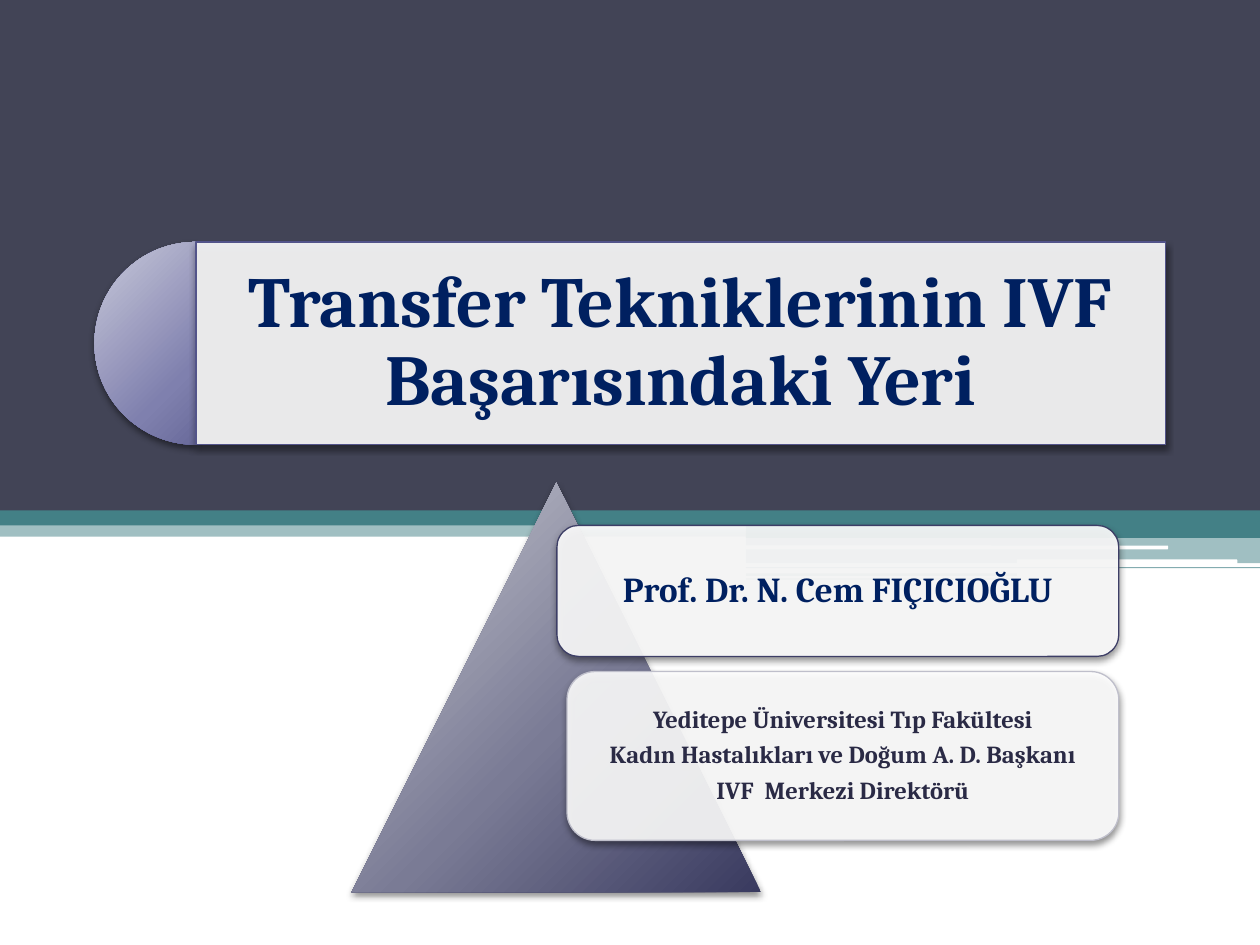
from pptx import Presentation
from pptx.dml.color import RGBColor
from pptx.enum.shapes import MSO_SHAPE
from pptx.enum.text import MSO_ANCHOR, MSO_AUTO_SIZE, PP_ALIGN
from pptx.oxml import parse_xml
from pptx.oxml.ns import nsdecls, qn
from pptx.util import Inches, Pt

# The grid has 10 columns and 7.5 rows of one inch each.
COLUMNS, ROWS = 10, 7.5
CELL = Inches(1)

FONT = "Cambria"
WHITE = RGBColor(0xFF, 0xFF, 0xFF)
SLATE = RGBColor(0x42, 0x44, 0x56)
TEAL = RGBColor(0x43, 0x80, 0x86)
NAVY = RGBColor(0x00, 0x20, 0x60)
INK = RGBColor(0x2A, 0x2A, 0x45)
BANNER_LINE = RGBColor(0x53, 0x54, 0x8A)
NAME_LINE = RGBColor(0x3D, 0x3E, 0x66)
ROLE_LINE = RGBColor(0xBF, 0xBF, 0xCB)
PIE_SHADES = [RGBColor(0xC9, 0xC9, 0xDA), RGBColor(0x7F, 0x80, 0xAE), RGBColor(0x4D, 0x4E, 0x81)]
TRIANGLE_SHADES = [RGBColor(0xC8, 0xC9, 0xD1), RGBColor(0x7A, 0x7B, 0x95), RGBColor(0x39, 0x3A, 0x5F)]


def place(shape, box):
    shape.left, shape.top, shape.width, shape.height = (int(CELL * part) for part in box)


def add_plain(page, kind, box):
    """Add a preset shape without outline or shadow."""
    shape = page.shapes.add_shape(kind, 0, 0, 0, 0)
    place(shape, box)
    shape.line.fill.background()
    shape.shadow.inherit = False
    return shape


def paint(shape, color, opacity=100):
    shape.fill.solid()
    shape.fill.fore_color.rgb = color
    if opacity < 100:
        tint = shape._element.spPr.find(qn("a:solidFill"))[0]
        tint.append(parse_xml(f'<a:alpha {nsdecls("a")} val="{opacity * 1000}"/>'))


def paint_gradient(shape, shades):
    """Fill with a circular gradient spreading from the upper left."""
    stops = "".join(
        f'<a:gs pos="{position * 1000}"><a:srgbClr val="{shade}"/></a:gs>'
        for position, shade in zip((0, 55, 100), shades)
    )
    shape.fill.background()
    properties = shape._element.spPr
    properties.replace(properties.find(qn("a:noFill")), parse_xml(
        f'<a:gradFill {nsdecls("a")} rotWithShape="1"><a:gsLst>{stops}</a:gsLst>'
        '<a:path path="circle"><a:fillToRect l="-40000" t="-90000" r="140000" b="190000"/>'
        '</a:path></a:gradFill>'))


def cast_shadow(shape):
    shape.shadow.inherit = False
    shape._element.spPr.find(qn("a:effectLst")).append(parse_xml(
        f'<a:outerShdw {nsdecls("a")} blurRad="{Pt(4)}" dist="{Pt(2)}" dir="5400000" rotWithShape="0">'
        '<a:srgbClr val="000000"><a:alpha val="45000"/></a:srgbClr></a:outerShdw>'))


def style_panel(shape, line_color):
    """Give a translucent white panel its fill, outline and shadow."""
    paint(shape, WHITE, 90)
    shape.line.color.rgb = line_color
    shape.line.width = Pt(0.75)
    cast_shadow(shape)


def write(shape, lines, size, color, inset):
    frame = shape.text_frame
    frame.text = "\n".join(lines)
    frame.word_wrap = True
    frame.auto_size = MSO_AUTO_SIZE.NONE
    frame.vertical_anchor = MSO_ANCHOR.MIDDLE
    frame.margin_left = frame.margin_right = frame.margin_top = frame.margin_bottom = int(CELL * inset)
    for para in frame.paragraphs:
        para.alignment = PP_ALIGN.CENTER
        para.line_spacing = 0.9
        para.space_before = Pt(0)
        para.space_after = Pt(round(size * 0.35))
        for span in para.runs:
            span.font.name = FONT
            span.font.size = Pt(size)
            span.font.bold = True
            span.font.color.rgb = color


def add_backdrop(page, box):
    """Draw the dark upper field and the teal stripes along its lower edge."""
    left, top, width, height = box
    edge = top + height
    start, middle = left + width * 0.592, left + width * 0.807
    right_part, short_part = width * 0.408, width * 0.215
    rectangle, rounded = MSO_SHAPE.RECTANGLE, MSO_SHAPE.ROUNDED_RECTANGLE
    stripes = [
        (rectangle, start, 0.12, right_part, 0.1, TEAL, 100),
        (rectangle, start, 0.21, right_part, 0.21, TEAL, 50),
        (rectangle, start, 0.45, right_part, 0.01, TEAL, 65),
        (rectangle, start, 0.5, short_part, 0.02, TEAL, 60),
        (rectangle, start, 0.54, short_part, 0.01, TEAL, 65),
        (rounded, start, 0.28, width * 0.335, 0.03, WHITE, 100),
        (rounded, middle, 0.39, width * 0.175, 0.04, WHITE, 100),
        (rectangle, left, -0.06, width, 0.27, TEAL, 50),
        (rectangle, left, -0.03, width, 0.15, TEAL, 100),
        (rectangle, left + width * 0.701, -0.07, width * 0.299, 0.27, TEAL, 100),
        (rectangle, left, -height, width, height, SLATE, 100),
    ]
    for kind, x, offset, stripe_width, thickness, color, opacity in stripes:
        stripe = add_plain(page, kind, (x, edge + offset, stripe_width, thickness))
        paint(stripe, color, opacity)


def add_title_banner(page, box):
    """Draw the half disc with the title panel starting at its centre."""
    left, top, width, height = box
    half_disc = add_plain(page, MSO_SHAPE.PIE, (left, top, height, height))
    half_disc.adjustments[0], half_disc.adjustments[1] = 54, 162
    paint_gradient(half_disc, PIE_SHADES)
    cast_shadow(half_disc)

    title = page.shapes.title
    title._element.getparent().append(title._element)  # bring to the front
    place(title, (left + height / 2, top, width - height / 2, height))
    style_panel(title, BANNER_LINE)
    write(title, ["Transfer Tekniklerinin IVF Başarısındaki Yeri"], 41, NAVY, 0.17)


def add_speaker(page, box):
    """Draw the triangle with the name and role cards, which share a right edge."""
    left, top, width, height = box
    triangle = add_plain(page, MSO_SHAPE.ISOSCELES_TRIANGLE, (left, top, height, height))
    paint_gradient(triangle, TRIANGLE_SHADES)
    cast_shadow(triangle)

    role = [
        "Yeditepe Üniversitesi Tıp Fakültesi",
        "Kadın Hastalıkları ve Doğum A. D. Başkanı",
        "IVF  Merkezi Direktörü",
    ]
    cards = [
        (4.46, 0.34, 1.04, NAME_LINE, ["Prof. Dr. N. Cem FIÇICIOĞLU"], 20, NAVY),
        (4.38, 1.5, 1.34, ROLE_LINE, role, 14, INK),
    ]
    for card_width, offset, card_height, line_color, lines, size, color in cards:
        card_box = (left + width - card_width, top + offset, card_width, card_height)
        card = add_plain(page, MSO_SHAPE.ROUNDED_RECTANGLE, card_box)
        style_panel(card, line_color)
        write(card, lines, size, color, 0.13)


def main():
    deck = Presentation()
    deck.slide_width, deck.slide_height = int(CELL * COLUMNS), int(CELL * ROWS)
    page = deck.slides.add_slide(deck.slide_layouts[5])
    add_backdrop(page, (0, 0, COLUMNS, 4.05))
    add_title_banner(page, (0.75, 1.92, 8.5, 1.61))
    add_speaker(page, (2.79, 3.83, 6.09, 3.25))
    deck.save("out.pptx")


if __name__ == "__main__":
    main()
